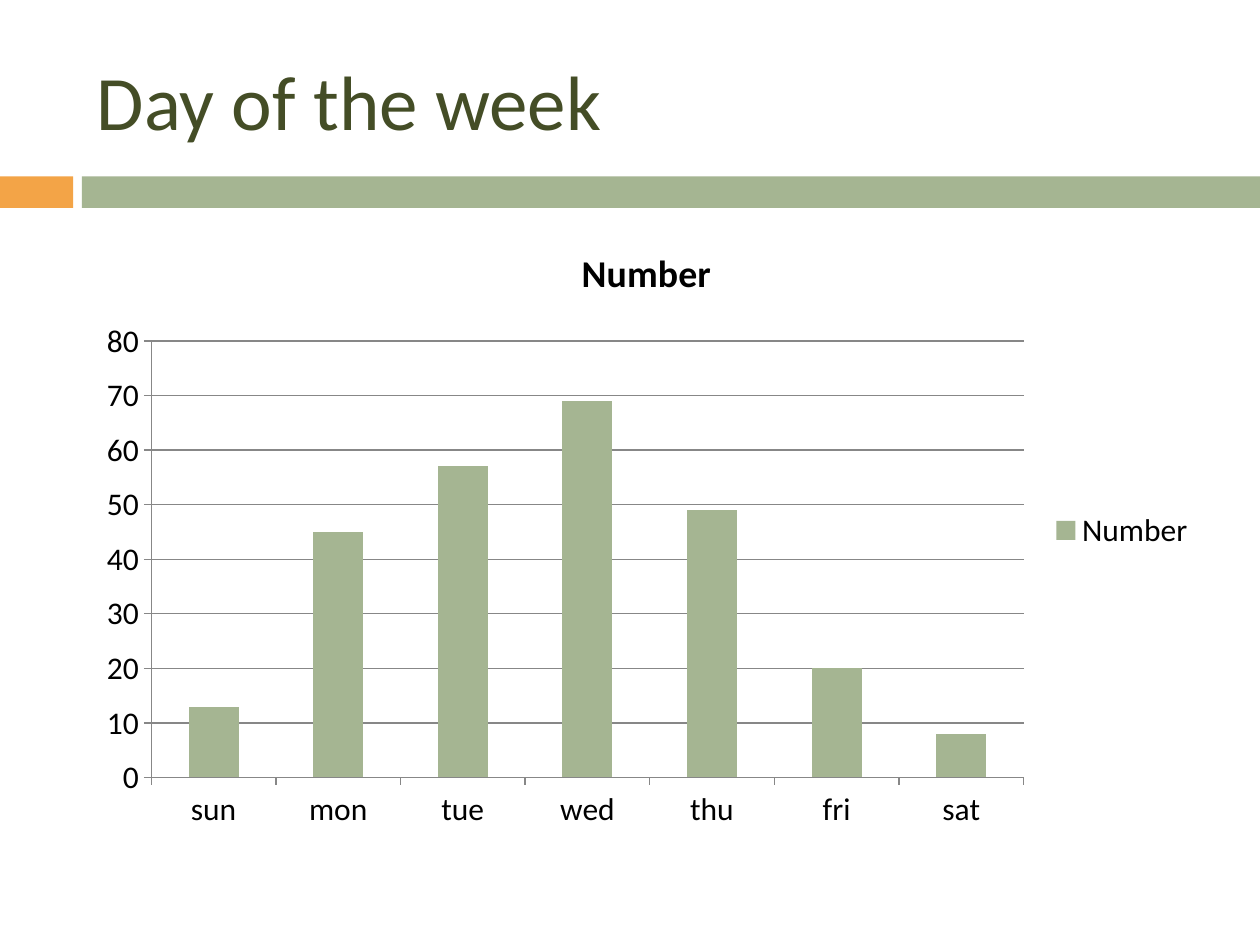
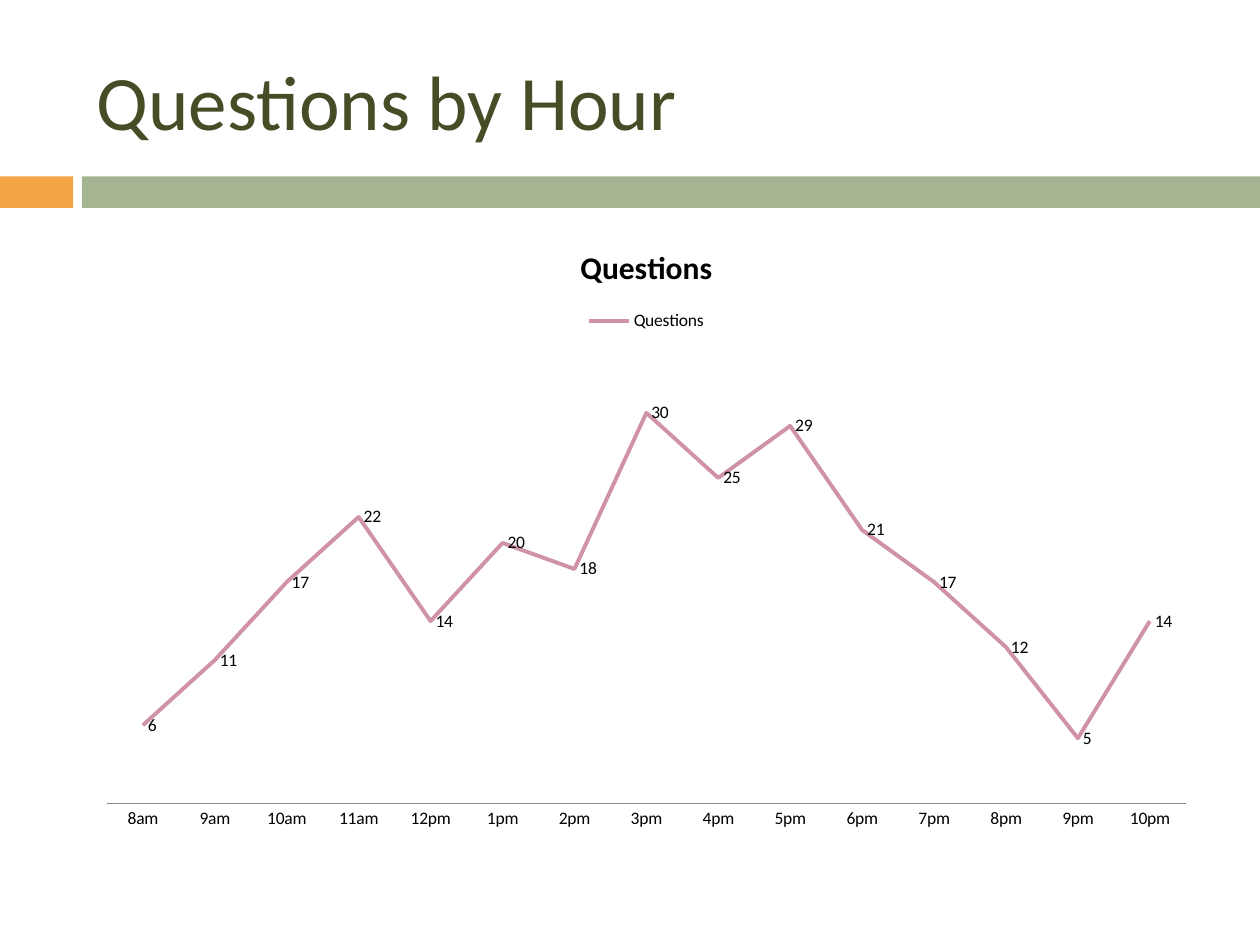
from dataclasses import dataclass

from pptx import Presentation
from pptx.chart.data import CategoryChartData
from pptx.dml.color import RGBColor
from pptx.enum.chart import (
    XL_CHART_TYPE as ChartType,
    XL_LABEL_POSITION as LabelPosition,
    XL_LEGEND_POSITION as LegendPosition,
    XL_TICK_MARK as TickMark,
)
from pptx.enum.shapes import MSO_SHAPE as Shape
from pptx.enum.text import MSO_ANCHOR as Anchor
from pptx.util import Inches, Pt


@dataclass(frozen=True)
class Theme:
    font: str = "Calibri"
    orange: RGBColor = RGBColor(0xF3, 0xA4, 0x47)
    sage: RGBColor = RGBColor(0xA5, 0xB5, 0x92)
    rose: RGBColor = RGBColor(0xD0, 0x92, 0xA7)
    olive: RGBColor = RGBColor(0x44, 0x4D, 0x26)
    black: RGBColor = RGBColor(0, 0, 0)
    gray: RGBColor = RGBColor(0x87, 0x87, 0x87)
    title_size: float = 44
    column_size: float = 18
    column_title_size: float = 21.6
    line_size: float = 10
    line_title_size: float = 18
    axis_width: float = 0.75
    series_width: float = 2.25


THEME = Theme()
PAGE_WIDTH, PAGE_HEIGHT = 10, 7.5
CONTENT_LEFT, CONTENT_WIDTH = 0.67, 8.92
BAND_TOP, BAND_HEIGHT = 1.4, 0.25

DAYS = ("sun", "mon", "tue", "wed", "thu", "fri", "sat")
DAY_COUNTS = (13, 45, 57, 69, 49, 20, 8)
HOURS = [f"{(hour - 1) % 12 + 1}{'am' if hour < 12 else 'pm'}" for hour in range(8, 23)]
HOUR_COUNTS = (6, 11, 17, 22, 14, 20, 18, 30, 25, 29, 21, 17, 12, 5, 14)


def style_font(font, size, color=THEME.black, bold=False):
    font.name = THEME.font
    font.size = Pt(size)
    font.bold = bold
    font.color.rgb = color


def style_line(line, color, width):
    line.color.rgb = color
    line.width = Pt(width)


def add_band(page, left, width, color):
    band = page.shapes.add_shape(
        Shape.RECTANGLE, Inches(left), Inches(BAND_TOP), Inches(width), Inches(BAND_HEIGHT)
    )
    band.shadow.inherit = False
    band.fill.solid()
    band.fill.fore_color.rgb = color
    band.line.fill.background()


def add_title(page, text):
    box = page.shapes.add_textbox(
        Inches(CONTENT_LEFT), Inches(0.25), Inches(CONTENT_WIDTH), Inches(1.08)
    )
    frame = box.text_frame
    frame.word_wrap = True
    frame.vertical_anchor = Anchor.MIDDLE
    span = frame.paragraphs[0].add_run()
    span.text = text
    style_font(span.font, THEME.title_size, THEME.olive)


def add_page(deck, title):
    """Add a blank slide with the shared bands and a title."""
    page = deck.slides.add_slide(deck.slide_layouts[6])
    add_band(page, 0, 0.58, THEME.orange)
    add_band(page, 0.65, PAGE_WIDTH - 0.65, THEME.sage)
    add_title(page, title)
    return page


def add_chart(page, kind, name, categories, values, size, title_size, legend_position):
    """Add a one-series chart with the common title, legend and axis style."""
    data = CategoryChartData()
    data.categories = categories
    data.add_series(name, values)
    chart = page.shapes.add_chart(
        kind, Inches(CONTENT_LEFT), Inches(1.75), Inches(CONTENT_WIDTH), Inches(4.92), data
    ).chart
    style_font(chart.font, size)

    chart.has_title = True
    span = chart.chart_title.text_frame.paragraphs[0].add_run()
    span.text = name
    style_font(span.font, title_size, bold=True)
    chart.chart_title.include_in_layout = False

    chart.has_legend = True
    chart.legend.position = legend_position
    chart.legend.include_in_layout = False

    chart.plots[0].vary_by_categories = False
    style_line(chart.category_axis.format.line, THEME.gray, THEME.axis_width)
    return chart


def add_column_chart(page, name, categories, values):
    chart = add_chart(
        page, ChartType.COLUMN_CLUSTERED, name, categories, values,
        THEME.column_size, THEME.column_title_size, LegendPosition.RIGHT,
    )
    plot = chart.plots[0]
    plot.gap_width = 150
    fill = plot.series[0].format.fill
    fill.solid()
    fill.fore_color.rgb = THEME.sage

    value_axis = chart.value_axis
    value_axis.has_major_gridlines = True
    for line in (value_axis.format.line, value_axis.major_gridlines.format.line):
        style_line(line, THEME.gray, THEME.axis_width)
    for axis in (value_axis, chart.category_axis):
        axis.major_tick_mark = TickMark.OUTSIDE


def add_line_chart(page, name, categories, values):
    chart = add_chart(
        page, ChartType.LINE, name, categories, values,
        THEME.line_size, THEME.line_title_size, LegendPosition.TOP,
    )
    series = chart.plots[0].series[0]
    series.smooth = False
    style_line(series.format.line, THEME.rose, THEME.series_width)

    labels = series.data_labels
    labels.show_value = True
    labels.position = LabelPosition.RIGHT
    style_font(labels.font, THEME.line_size)

    chart.category_axis.major_tick_mark = TickMark.NONE
    chart.value_axis.has_major_gridlines = False
    chart.value_axis.visible = False


def main():
    deck = Presentation()
    deck.slide_width, deck.slide_height = Inches(PAGE_WIDTH), Inches(PAGE_HEIGHT)
    add_column_chart(add_page(deck, "Day of the week"), "Number", DAYS, DAY_COUNTS)
    add_line_chart(add_page(deck, "Questions by Hour"), "Questions", HOURS, HOUR_COUNTS)
    deck.save("out.pptx")


if __name__ == "__main__":
    main()
